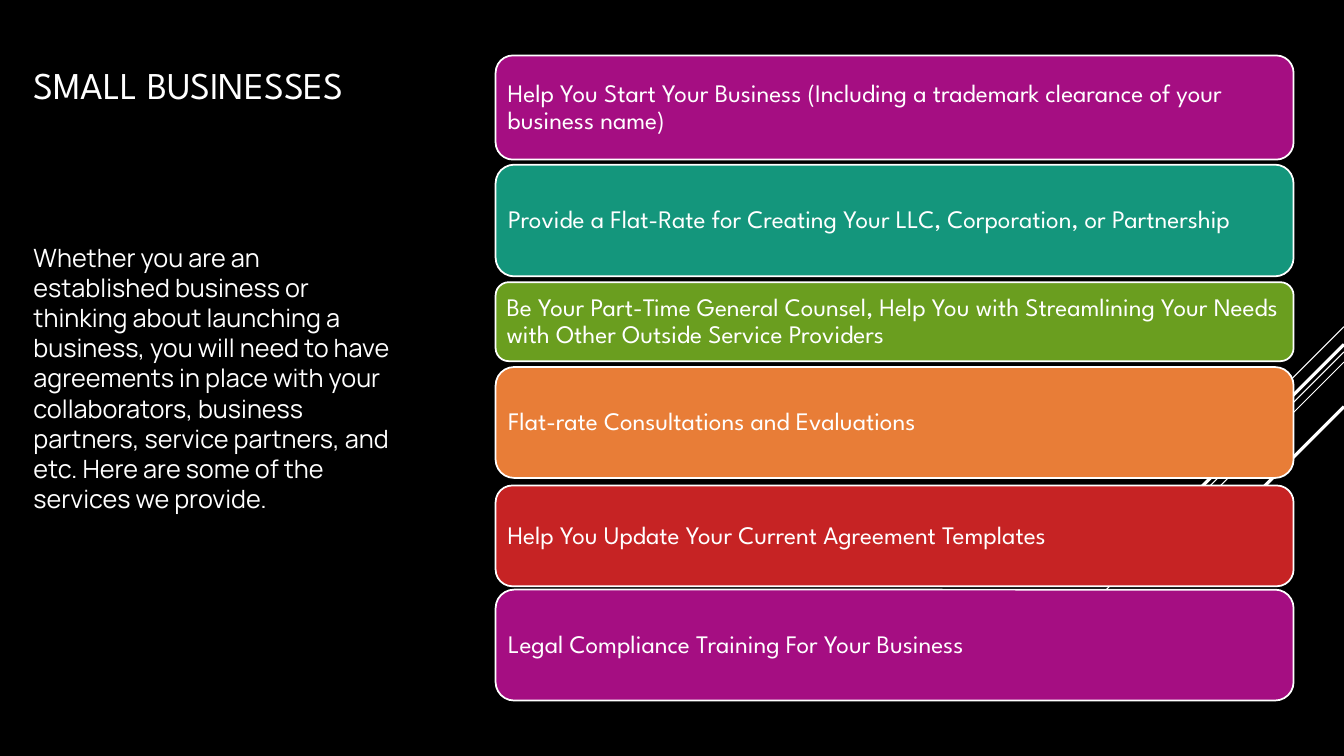
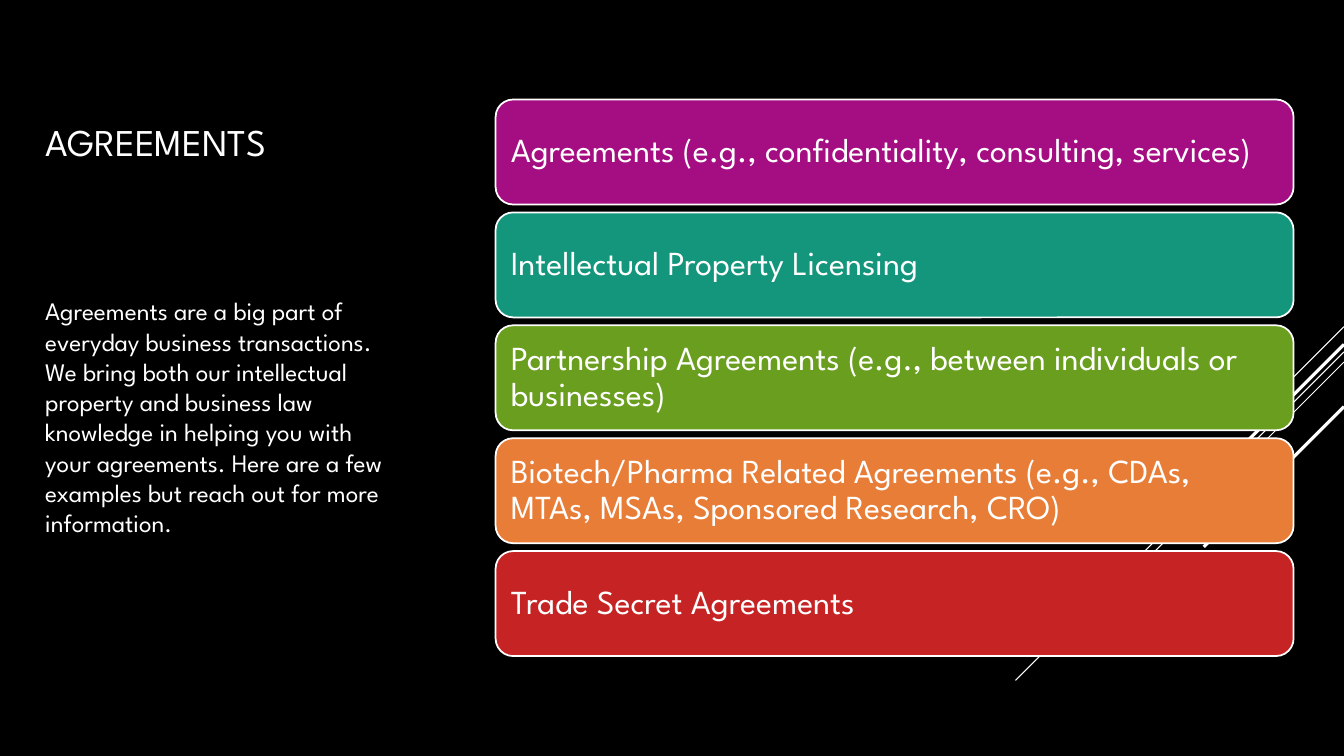
from lxml import etree
from pptx import Presentation
from pptx import util as u
from pptx.dml.color import RGBColor
from pptx.enum import shapes, text
from pptx.oxml import ns

COLUMNS, ROWS = 160, 90
CARD_COLUMN, CARD_COLUMNS = 59, 95
TEXT_COLUMNS = 45

BLACK, WHITE = "000000", "FFFFFF"
CARD_FILLS = ["A50E82", "14967C", "6A9E1F", "E87D37", "C62324"]
HEADING_FONT, ALTERNATE_FONT = "League Spartan", "Manrope"

DIAGONALS = [
    (38.9, 12, 0.75),
    (41.9, 39.1, 0.75),
    (43.1, 24.8, 0.75),
    (41, 22.9, 2.25),
    (48.4, 16.7, 2.25),
]


def colour(value):
    return RGBColor.from_string(value)


class Deck:
    def __init__(self):
        self.prs = Presentation()
        self.prs.slide_width = u.Inches(13.33)
        self.prs.slide_height = u.Inches(7.5)
        backdrop = self.prs.slide_master.background.fill
        backdrop.solid()
        backdrop.fore_color.rgb = colour(BLACK)
        self.slide = None

    def x(self, columns):
        return round(self.prs.slide_width * columns / COLUMNS)

    def y(self, rows):
        return round(self.prs.slide_height * rows / ROWS)

    def box(self, column, row, columns, rows):
        return self.x(column), self.y(row), self.x(columns), self.y(rows)

    def new_slide(self):
        self.slide = self.prs.slides.add_slide(self.prs.slide_layouts[6])
        for row, reach, weight in DIAGONALS:
            self.diagonal(row, reach, weight)

    def diagonal(self, row, reach, weight):
        streak = self.slide.shapes.add_connector(
            shapes.MSO_CONNECTOR.STRAIGHT,
            self.x(COLUMNS), self.y(row),
            self.x(COLUMNS - reach), self.y(row + reach),
        )
        streak.line.color.rgb = colour(WHITE)
        streak.line.width = u.Pt(weight)
        etree.SubElement(streak._element.spPr, ns.qn("a:effectLst"))

    def set_words(self, holder, words, size, font, anchor):
        frame = holder.text_frame
        frame.word_wrap = True
        frame.vertical_anchor = anchor
        frame.text = words
        paragraph = frame.paragraphs[0]
        paragraph.alignment = text.PP_ALIGN.LEFT
        for run in paragraph.runs:
            run.font.size = u.Pt(size)
            run.font.name = font
            run.font.color.rgb = colour(WHITE)
        return frame

    def title(self, words, column, row):
        heading = self.slide.shapes.add_textbox(
            *self.box(column, row, TEXT_COLUMNS, 6))
        self.set_words(heading, words, 27, HEADING_FONT,
                       text.MSO_ANCHOR.MIDDLE)

    def body(self, words, column, row, rows, font):
        intro = self.slide.shapes.add_textbox(
            *self.box(column, row, TEXT_COLUMNS, rows))
        self.set_words(intro, words, 18, font, text.MSO_ANCHOR.TOP)

    def card(self, words, row, rows, fill, size, padding):
        card = self.slide.shapes.add_shape(
            shapes.MSO_SHAPE.ROUNDED_RECTANGLE,
            *self.box(CARD_COLUMN, row, CARD_COLUMNS, rows))
        card.shadow.inherit = False
        card.fill.solid()
        card.fill.fore_color.rgb = colour(fill)
        card.line.color.rgb = colour(WHITE)
        card.line.width = u.Pt(1.25)
        frame = self.set_words(card, words, size, HEADING_FONT,
                               text.MSO_ANCHOR.MIDDLE)
        frame.paragraphs[0].line_spacing = 0.9
        frame.margin_left = frame.margin_right = self.x(padding)
        frame.margin_top = frame.margin_bottom = self.y(padding)

    def cards(self, entries, size, padding):
        for index, (words, row, rows) in enumerate(entries):
            fill = CARD_FILLS[index % len(CARD_FILLS)]
            self.card(words, row, rows, fill, size, padding)


def small_businesses(deck):
    deck.new_slide()
    deck.title("SMALL BUSINESSES", 2.8, 7)
    deck.cards([
        ("Help You Start Your Business (Including a trademark clearance "
         "of your business name)", 6.6, 12.4),
        ("Provide a Flat-Rate for Creating Your LLC, Corporation, "
         "or Partnership", 19.6, 13.3),
        ("Be Your Part-Time General Counsel, Help You with Streamlining "
         "Your Needs with Other Outside Service Providers", 33.6, 9.4),
        ("Flat-rate Consultations and Evaluations", 43.7, 13.2),
        ("Help You Update Your Current Agreement Templates", 57.8, 12),
        ("Legal Compliance Training For Your Business", 70.2, 13.2),
    ], size=18, padding=0.84)
    deck.body(
        "Whether you are an established business or thinking about launching "
        "a business, you will need to have agreements in place with your "
        "collaborators, business partners, service partners, and etc. Here "
        "are some of the services we provide.",
        2.8, 28.2, 30.2, ALTERNATE_FONT)


def agreements(deck):
    deck.new_slide()
    deck.title("AGREEMENTS", 4.2, 13.8)
    services = [
        "Agreements (e.g., confidentiality, consulting, services)",
        "Intellectual Property Licensing",
        "Partnership Agreements (e.g., between individuals or businesses)",
        "Biotech/Pharma Related Agreements (e.g., CDAs, MTAs, MSAs, "
        "Sponsored Research, CRO)",
        "Trade Secret Agreements",
    ]
    first_row, pitch, rows = 11.85, 13.44, 12.5
    deck.cards([(service, first_row + index * pitch, rows)
                for index, service in enumerate(services)],
               size=24, padding=1.2)
    deck.body(
        "Agreements are a big part of everyday business transactions. We "
        "bring both our intellectual property and business law knowledge in "
        "helping you with your agreements. Here are a few examples but reach "
        "out for more information.",
        4.2, 34.6, 34, HEADING_FONT)


def main():
    deck = Deck()
    small_businesses(deck)
    agreements(deck)
    deck.prs.save("out.pptx")


if __name__ == "__main__":
    main()
